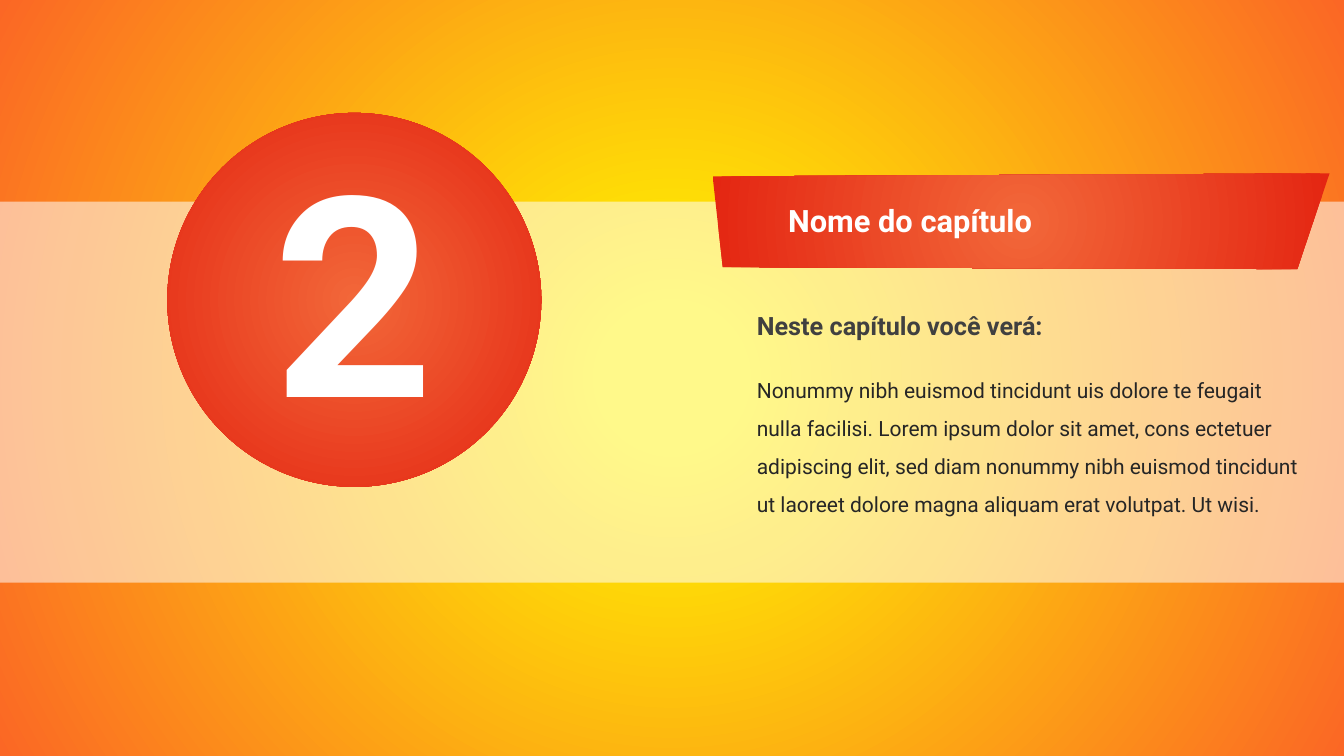
from lxml import etree
from pptx import Presentation, util as u
from pptx.dml.color import RGBColor
from pptx.enum import shapes, text
from pptx.oxml import ns

COLORS = {
    "yellow": "FFF200",
    "orange": "FB6725",
    "coral": "F26739",
    "red": "E42612",
    "white": "FFFFFF",
    "heading": "404040",
    "body": "262626",
}


class ChapterSlide:
    font_name = "Roboto"
    columns, rows = 80, 45

    def __init__(self, presentation):
        self.slide = presentation.slides.add_slide(presentation.slide_layouts[6])
        self.column = presentation.slide_width / self.columns
        self.row = presentation.slide_height / self.rows

    def color(self, name):
        return RGBColor.from_string(COLORS[name])

    def point(self, x, y):
        return u.Emu(round(x * self.column)), u.Emu(round(y * self.row))

    def box(self, left, top, width, height):
        return *self.point(left, top), *self.point(width, height)

    def shape(self, kind, *place):
        shape = self.slide.shapes.add_shape(kind, *self.box(*place))
        return self.plain(shape)

    def polygon(self, *corners):
        start, *others = [self.point(*corner) for corner in corners]
        builder = self.slide.shapes.build_freeform(*start)
        builder.add_line_segments(others, close=True)
        return self.plain(builder.convert_to_shape())

    def plain(self, shape):
        shape.shadow.inherit = False
        shape.line.fill.background()
        return shape

    def radial(self, shape, inner, outer, start=0):
        shape.fill.gradient()
        stops = shape.fill.gradient_stops
        for stop, name, position in zip(stops, (inner, outer), (start, 1)):
            stop.color.rgb = self.color(name)
            stop.position = position
        gradient = shape._element.spPr.find(ns.qn("a:gradFill"))
        gradient.remove(gradient.find(ns.qn("a:lin")))
        circle = etree.SubElement(gradient, ns.qn("a:path"), path="circle")
        center = dict.fromkeys("ltrb", "50000")
        etree.SubElement(circle, ns.qn("a:fillToRect"), center)

    def translucent(self, shape, name, opacity):
        shape.fill.solid()
        shape.fill.fore_color.rgb = self.color(name)
        color = shape._element.spPr.find(".//" + ns.qn("a:srgbClr"))
        etree.SubElement(color, ns.qn("a:alpha"), val=str(opacity * 1000))

    def text_box(self, *place, margin_top=0.05):
        frame = self.slide.shapes.add_textbox(*self.box(*place)).text_frame
        frame.word_wrap = True
        frame.auto_size = text.MSO_AUTO_SIZE.NONE
        frame.margin_top = u.Inches(margin_top)
        return frame

    def set_text(self, paragraph, words, size, color, bold=True):
        paragraph.text = words
        font = paragraph.font
        font.name, font.size, font.bold = self.font_name, u.Pt(size), bold
        font.color.rgb = self.color(color)


def main():
    presentation = Presentation()
    presentation.slide_width = u.Inches(13.33)
    presentation.slide_height = u.Inches(7.5)
    chapter = ChapterSlide(presentation)
    preset = shapes.MSO_SHAPE

    background = chapter.shape(preset.RECTANGLE, 0, 0, chapter.columns, chapter.rows)
    chapter.radial(background, "yellow", "orange", start=0.09)
    band = chapter.shape(preset.RECTANGLE, 0, 12, chapter.columns, 22.68)
    chapter.translucent(band, "white", 54)
    ribbon = chapter.polygon((42.42, 10.5), (79.14, 10.32), (77.22, 16.02), (43.02, 15.9))
    chapter.radial(ribbon, "coral", "red")

    summary = chapter.text_box(44.46, 16.02, 33.66, 15, margin_top=0.41)
    chapter.set_text(summary.paragraphs[0], "Neste capítulo você verá:", 18, "heading")
    description = summary.add_paragraph()
    chapter.set_text(
        description,
        "Nonummy nibh euismod tincidunt uis dolore te feugait nulla facilisi. "
        "Lorem ipsum dolor sit amet, cons ectetuer adipiscing elit, sed diam "
        "nonummy nibh euismod tincidunt ut laoreet dolore magna aliquam erat "
        "volutpat. Ut wisi.",
        15, "body", bold=False,
    )
    description.line_spacing = 1.5
    description.space_before = u.Pt(17.6)

    title = chapter.text_box(46.32, 11.7, 30, 4.62)
    chapter.set_text(title.paragraphs[0], "Nome do capítulo", 22, "white")

    disc = chapter.shape(preset.OVAL, 9.96, 6.72, 22.26, 22.26)
    chapter.radial(disc, "coral", "red")
    number = chapter.text_box(15.66, 6.72, 39.06, 22.62)
    chapter.set_text(number.paragraphs[0], "2", 200, "white")

    presentation.save("out.pptx")


if __name__ == "__main__":
    main()
